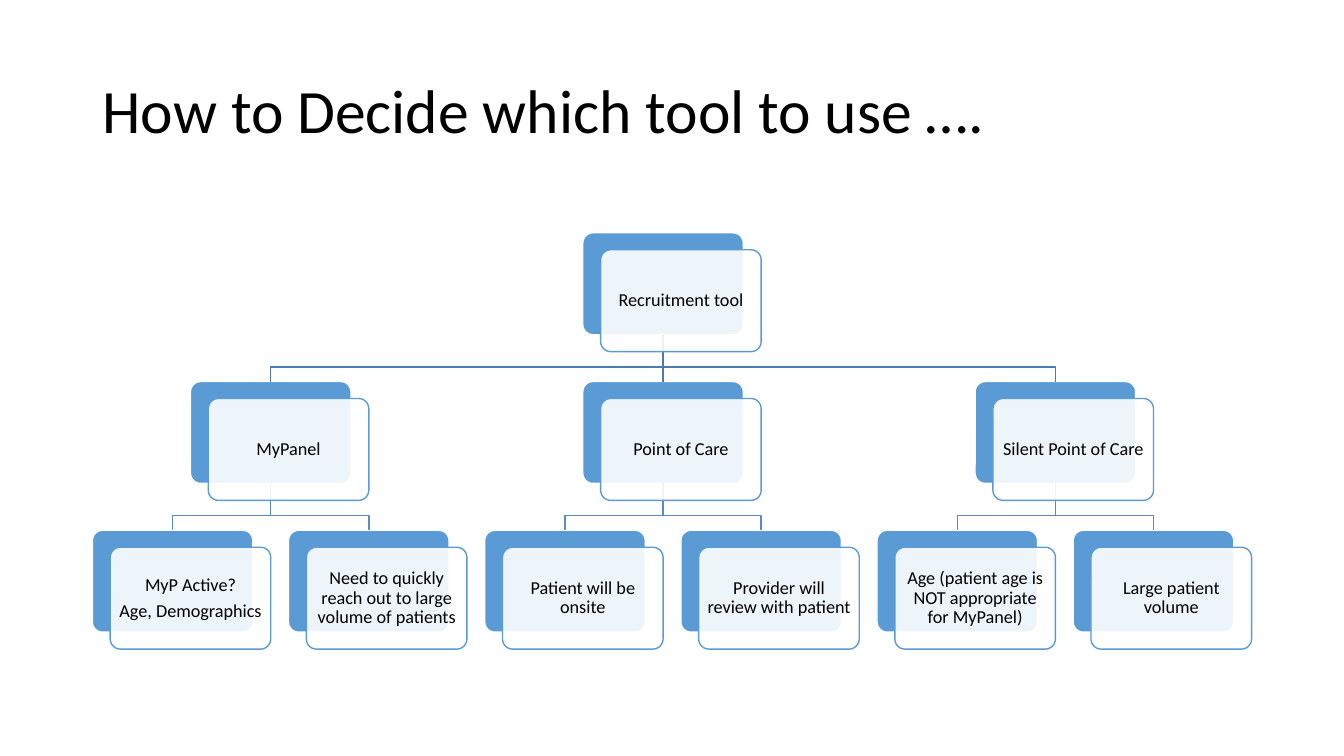
from lxml.etree import SubElement
from pptx import Presentation
from pptx.dml.color import RGBColor
from pptx.enum.shapes import MSO_CONNECTOR, MSO_SHAPE
from pptx.enum.text import MSO_ANCHOR, PP_ALIGN
from pptx.oxml.ns import qn
from pptx.util import Pt

# Tree: one root, its tools, and the criteria under each tool
ROOT = "Recruitment tool"
TOOLS = {
    "MyPanel": ["MyP Active?\nAge, Demographics",
                "Need to quickly reach out to large volume of patients"],
    "Point of Care": ["Patient will be onsite", "Provider will review with patient"],
    "Silent Point of Care": ["Age (patient age is NOT appropriate for MyPanel)",
                             "Large patient volume"],
}

# Layout in points
LEFT, TOP = 66, 166.3
BOX_WIDTH, BOX_HEIGHT = 114.7, 72.8
COLUMN_STEP, ROW_STEP = 140.12, 106.25
CARD_DX, CARD_DY = 12.74, 12.1
BEND = 23  # drop from a parent's bottom to the horizontal run

BLUE, WHITE, BLACK = "5B9BD5", "FFFFFF", "000000"
LINE_COLOURS = ["497CAB", "538DC1"]  # by level of the parent


def colour(hex_string):
    return RGBColor.from_string(hex_string)


def set_text(shape, text, size, align=PP_ALIGN.LEFT, space_after=0, margin=3.6):
    frame = shape.text_frame
    frame.word_wrap = True
    frame.vertical_anchor = MSO_ANCHOR.MIDDLE
    frame.margin_left = frame.margin_right = Pt(margin)
    frame.margin_top = frame.margin_bottom = Pt(3.6)
    frame.text = text
    for paragraph in frame.paragraphs:
        paragraph.alignment = align
        paragraph.line_spacing = 0.9
        paragraph.space_after = Pt(space_after)
        font = paragraph.runs[0].font
        font.name, font.size = "Calibri", Pt(size)
        font.color.rgb = colour(BLACK)


def add_box(slide, column, level, fill, line, dx=0, dy=0):
    shape = slide.shapes.add_shape(
        MSO_SHAPE.ROUNDED_RECTANGLE,
        Pt(LEFT + column * COLUMN_STEP + dx), Pt(TOP + level * ROW_STEP + dy),
        Pt(BOX_WIDTH), Pt(BOX_HEIGHT))
    shape.adjustments[0] = 0.1
    shape.shadow.inherit = False
    shape.fill.solid()
    shape.fill.fore_color.rgb = colour(fill)
    shape.line.color.rgb = colour(line)
    shape.line.width = Pt(1)
    return shape


def add_card(slide, text, column, level):
    card = add_box(slide, column, level, WHITE, BLUE, CARD_DX, CARD_DY)
    fill_colour = card.fill._xPr.find(qn("a:solidFill"))[0]
    SubElement(fill_colour, qn("a:alpha"), val="90000")
    set_text(card, text, 13, align=PP_ALIGN.CENTER, space_after=4.5)


def join(slide, parent, child, line_colour):
    start_x, start_y = parent.left + parent.width // 2, parent.top + parent.height
    end_x, end_y = child.left + child.width // 2, child.top
    if abs(start_x - end_x) < Pt(1):
        link = slide.shapes.add_connector(
            MSO_CONNECTOR.STRAIGHT, start_x, start_y, end_x, end_y)
        link.begin_connect(parent, 2)
        link.end_connect(child, 0)
        SubElement(link._element.spPr, qn("a:effectLst"))
    else:
        bend_y = start_y + Pt(BEND)
        builder = slide.shapes.build_freeform(start_x, start_y)
        builder.add_line_segments(
            [(start_x, bend_y), (end_x, bend_y), (end_x, end_y)], close=False)
        link = builder.convert_to_shape()
        link.fill.background()
        link.shadow.inherit = False
    link.line.color.rgb = colour(line_colour)
    link.line.width = Pt(1)


def place_nodes():
    """List (text, column, level, parent index); parents sit over their children."""
    nodes = [(ROOT, 2.5, 0, None)]
    for tool_index, (tool, criteria) in enumerate(TOOLS.items()):
        first_column = 2 * tool_index
        nodes.append((tool, first_column + 0.5, 1, 0))
        tool_node = len(nodes) - 1
        for offset, text in enumerate(criteria):
            nodes.append((text, first_column + offset, 2, tool_node))
    return nodes


def main():
    presentation = Presentation()
    presentation.slide_width, presentation.slide_height = Pt(960), Pt(540)
    slide = presentation.slides.add_slide(presentation.slide_layouts[5])

    # Title
    title = slide.shapes.title
    title.left, title.top, title.width, title.height = Pt(66), Pt(28.8), Pt(828), Pt(104.4)
    set_text(title, "How to Decide which tool to use ….", 44, margin=7.2)

    # Blue boxes, then the lines between them, then the cards on top
    nodes = place_nodes()
    boxes = [add_box(slide, column, level, BLUE, WHITE) for _, column, level, _ in nodes]
    for box, (_, _, level, parent) in zip(boxes, nodes):
        if parent is not None:
            join(slide, boxes[parent], box, LINE_COLOURS[level - 1])
    for text, column, level, _ in nodes:
        add_card(slide, text, column, level)

    presentation.save("out.pptx")


if __name__ == "__main__":
    main()
